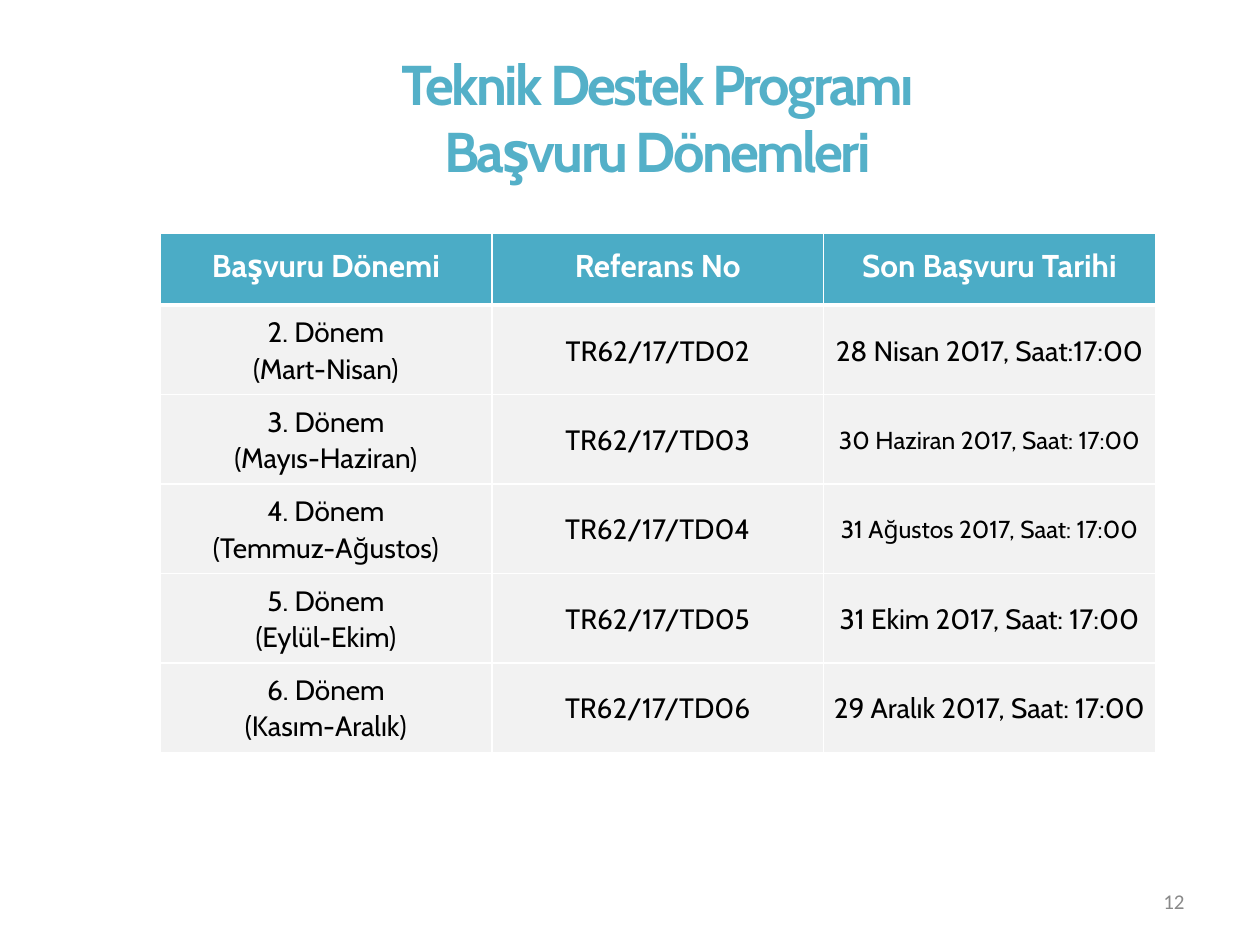
from lxml import etree
from pptx import Presentation
from pptx import util as u
from pptx.dml.color import RGBColor
from pptx.enum import text
from pptx.oxml import ns

TEAL = RGBColor(0x4B, 0xAC, 0xC6)
WHITE = RGBColor(0xFF, 0xFF, 0xFF)
BLACK = RGBColor(0, 0, 0)
PALE = RGBColor(0xF2, 0xF2, 0xF2)
GREY = RGBColor(0x89, 0x89, 0x89)

WIDTH, HEIGHT = u.Inches(10), u.Inches(7.5)
HEADER_HEIGHT, ROW_HEIGHT = u.Inches(0.57), u.Inches(0.71)
SMALL_DATES = ("Haziran", "Ağustos")  # long month names get smaller type

HEADINGS = ("Başvuru Dönemi", "Referans No", "Son Başvuru Tarihi")
PERIODS = (
    ("Mart-Nisan", "28 Nisan 2017, Saat:17:00"),
    ("Mayıs-Haziran", "30 Haziran 2017, Saat: 17:00"),
    ("Temmuz-Ağustos", "31 Ağustos 2017, Saat: 17:00"),
    ("Eylül-Ekim", "31 Ekim 2017, Saat: 17:00"),
    ("Kasım-Aralık", "29 Aralık 2017, Saat: 17:00"),
)


def box(left, top, width, height):
    """Turn shares of the slide into lengths."""
    return (int(left * WIDTH), int(top * HEIGHT),
            int(width * WIDTH), int(height * HEIGHT))


def write(frame, content, size, color, font="Cabin", bold=False,
          align=text.PP_ALIGN.CENTER, line_spacing=None, spacing=None, alpha=None):
    """Write one paragraph for each line of content."""
    for index, line in enumerate(content.split("\n")):
        paragraph = frame.paragraphs[0] if index == 0 else frame.add_paragraph()
        paragraph.alignment = align
        paragraph.line_spacing = line_spacing
        run = paragraph.add_run()
        run.text = line
        run.font.name, run.font.size, run.font.bold = font, u.Pt(size), bold
        run.font.color.rgb = color
        properties = run.font._element
        if spacing is not None:
            properties.set("spc", str(int(spacing * 100)))
        if alpha is not None:
            fill_color = properties.find(".//" + ns.qn("a:srgbClr"))
            etree.SubElement(fill_color, ns.qn("a:alpha"), val=str(alpha * 1000))


def add_text(slide, area, content, size, color, **style):
    frame = slide.shapes.add_textbox(*area).text_frame
    frame.word_wrap = True
    frame.vertical_anchor = text.MSO_ANCHOR.MIDDLE
    write(frame, content, size, color, **style)


def set_borders(cell, **widths):
    """Draw white cell borders; widths are in points by side."""
    properties = cell._tc.get_or_add_tcPr()
    for side in "LRTB":
        line = etree.SubElement(properties, ns.qn("a:ln" + side),
                                w=str(u.Pt(widths.get(side, 1))))
        fill = etree.SubElement(line, ns.qn("a:solidFill"))
        etree.SubElement(fill, ns.qn("a:srgbClr"), val=str(WHITE))


def fill_cell(cell, content, fill, size, color, borders, **style):
    set_borders(cell, **borders)
    cell.fill.solid()
    cell.fill.fore_color.rgb = fill
    cell.vertical_anchor = text.MSO_ANCHOR.MIDDLE
    cell.margin_left = cell.margin_right = u.Inches(0.07)
    cell.margin_top = cell.margin_bottom = 0
    write(cell.text_frame, content, size, color, **style)


def add_period_table(slide, area):
    table = slide.shapes.add_table(len(PERIODS) + 1, len(HEADINGS), *area).table
    for column in table.columns:
        column.width = area[2] // len(HEADINGS)
    for index, row in enumerate(table.rows):
        row.height = ROW_HEIGHT if index else HEADER_HEIGHT

    # Header row
    for column, heading in enumerate(HEADINGS):
        fill_cell(table.cell(0, column), heading, TEAL, 18, WHITE, {"B": 3},
                  bold=True, line_spacing=u.Pt(18))

    # One row for each application period, numbered from 2
    for row, (months, deadline) in enumerate(PERIODS, start=1):
        number = row + 1
        values = (f"{number}. Dönem\n({months})", f"TR62/17/TD{number:02}", deadline)
        for column, value in enumerate(values):
            small = column == 2 and any(month in value for month in SMALL_DATES)
            fill_cell(table.cell(row, column), value, PALE, 14 if small else 16, BLACK,
                      {"T": 3 if row == 1 else 1}, line_spacing=1.07)


def build_slide(presentation):
    slide = presentation.slides.add_slide(presentation.slide_layouts[6])
    # Title
    add_text(slide, box(0.072, 0.04, 0.9, 0.167),
             "Teknik Destek Programı\nBaşvuru Dönemleri", 32, TEAL,
             bold=True, spacing=-1.5, alpha=95)
    # Periods
    add_period_table(slide, box(0.127, 0.247, 0.79, 0.548))
    # Slide number
    add_text(slide, box(0.717, 0.927, 0.233, 0.053), "12", 12, GREY,
             font="Calibri", align=text.PP_ALIGN.RIGHT)


def main():
    presentation = Presentation()
    presentation.slide_width, presentation.slide_height = WIDTH, HEIGHT
    build_slide(presentation)
    presentation.save("out.pptx")


if __name__ == "__main__":
    main()
